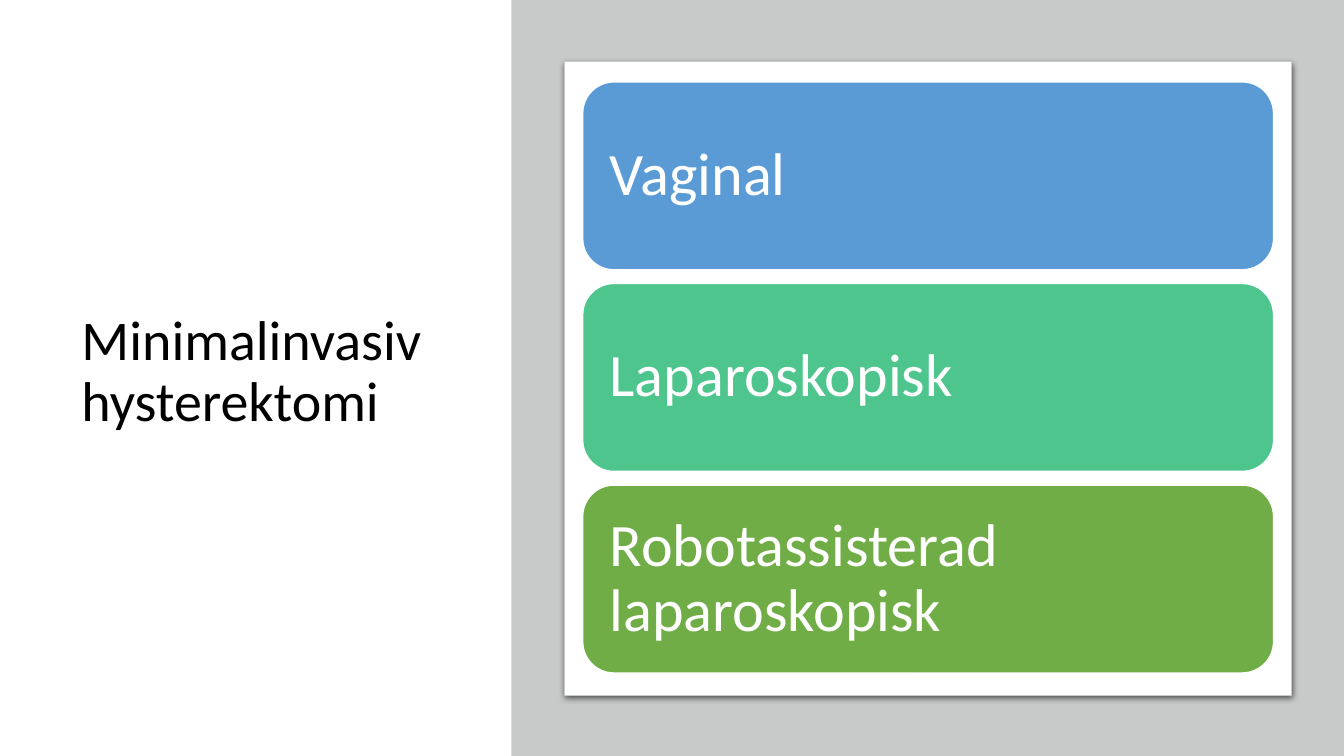
from lxml import etree
from pptx import Presentation
from pptx.dml.color import RGBColor
from pptx.enum.shapes import MSO_SHAPE as SHAPE
from pptx.enum.text import MSO_ANCHOR as ANCHOR, MSO_AUTO_SIZE as FIT, PP_ALIGN as ALIGN
from pptx.oxml.ns import qn
from pptx.util import Pt

PX = 9525  # EMU per px, 96 px to the inch
COLORS = {
    "text": "000000",
    "white": "FFFFFF",
    "grey": "C8CACA",
    "blue": "5B9BD5",
    "mint": "4DC58D",
    "green": "70AD47",
}


class Deck:
    font = "Calibri"

    def __init__(self, width, height):
        self.prs = Presentation()
        self.prs.slide_width, self.prs.slide_height = width * PX, height * PX

    def color(self, name):
        return RGBColor.from_string(COLORS[name])

    def add_slide(self):
        self.s = self.prs.slides.add_slide(self.prs.slide_layouts[5])

    def set_text(self, tf, text, size, color):
        tf.word_wrap = True
        tf.auto_size = FIT.NONE
        tf.vertical_anchor = ANCHOR.MIDDLE
        p = tf.paragraphs[0]
        p.alignment = ALIGN.LEFT
        p.line_spacing = 0.9
        r = p.add_run()
        r.text = text
        r.font.name, r.font.size = self.font, Pt(size)
        r.font.color.rgb = self.color(color)

    def title(self, text, x, y, w, h, size):
        sp = self.s.shapes.title
        sp.left, sp.top, sp.width, sp.height = (v * PX for v in (x, y, w, h))
        self.set_text(sp.text_frame, text, size, "text")

    def box(self, kind, x, y, w, h, fill, line=None, line_pt=1):
        sp = self.s.shapes.add_shape(kind, *(v * PX for v in (x, y, w, h)))
        sp.shadow.inherit = False
        sp.fill.solid()
        sp.fill.fore_color.rgb = self.color(fill)
        if line:
            sp.line.color.rgb = self.color(line)
            sp.line.width = Pt(line_pt)
        else:
            sp.line.fill.background()
        return sp

    def card(self, x, y, w, h):
        sp = self.box(SHAPE.ROUNDED_RECTANGLE, x, y, w, h, "white", "grey", 0.75)
        sp.adjustments[0] = 0
        effects = sp._element.spPr.find(qn("a:effectLst"))
        shadow = etree.SubElement(effects, qn("a:outerShdw"), blurRad=str(Pt(4.5)),
                                  dist=str(Pt(1.5)), dir="5400000", rotWithShape="0")
        clr = etree.SubElement(shadow, qn("a:srgbClr"), val=COLORS["text"])
        etree.SubElement(clr, qn("a:alpha"), val="63000")

    def bar(self, text, x, y, w, h, fill, size, inset):
        sp = self.box(SHAPE.ROUNDED_RECTANGLE, x, y, w, h, fill, "white")
        tf = sp.text_frame
        tf.margin_left = tf.margin_right = inset * PX
        tf.margin_top = tf.margin_bottom = inset * PX
        self.set_text(tf, text, size, "white")


def main():
    deck = Deck(1280, 720)
    deck.add_slide()

    # Title on the left
    deck.title("Minimalinvasiv hysterektomi", 68, 66, 385, 578, 40)

    # Grey panel with the white card
    deck.box(SHAPE.RECTANGLE, 487, 0, 793, 720, "grey")
    deck.card(538, 59, 692, 603)

    # One bar for each method
    methods = [
        ("Vaginal", "blue"),
        ("Laparoskopisk", "mint"),
        ("Robotassisterad laparoskopisk", "green"),
    ]
    top, height, gap = 78, 179, 13
    for i, (name, fill) in enumerate(methods):
        deck.bar(name, 555, top + i * (height + gap), 658, height, fill, 43, 17)

    deck.prs.save("out.pptx")


if __name__ == "__main__":
    main()
